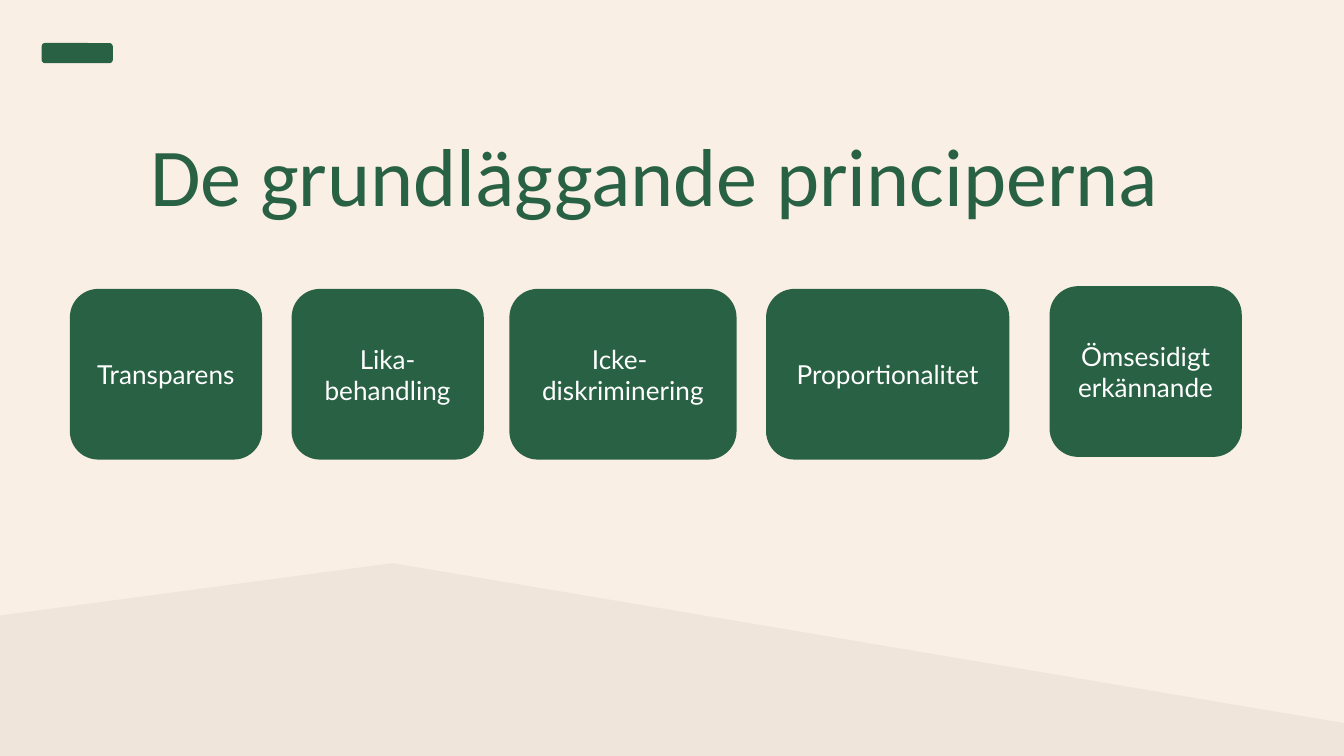
from pptx import Presentation
from pptx.dml.color import RGBColor
from pptx.enum.shapes import MSO_SHAPE
from pptx.enum.text import MSO_ANCHOR, PP_ALIGN
from pptx.util import Inches, Pt

ROUND = MSO_SHAPE.ROUNDED_RECTANGLE
MIDDLE, BOTTOM = MSO_ANCHOR.MIDDLE, MSO_ANCHOR.BOTTOM
CENTER = PP_ALIGN.CENTER
WIDE = 10
HIGH = WIDE * 9 / 16


def color(code):
    return RGBColor.from_string(code)


def write(frame, text, font="Lato", size=14, tint="FFFFFF", anchor=MIDDLE,
          inset=0.1, space=1.0):
    frame.text = text
    frame.word_wrap = True
    frame.vertical_anchor = anchor
    frame.margin_left = frame.margin_right = Inches(inset)
    frame.margin_top = frame.margin_bottom = Inches(inset / 2)
    for para in frame.paragraphs:
        para.alignment = CENTER
        para.line_spacing = space
        for run in para.runs:
            run.font.name = font
            run.font.size = Pt(size)
            run.font.color.rgb = color(tint)


class Deck:
    cream, sand, green = "FAEFE5", "F0E5DB", "296144"

    def __init__(self, width, height):
        self.prs = Presentation()
        self.prs.slide_width = Inches(width)
        self.prs.slide_height = Inches(height)
        self.slide = self.prs.slides.add_slide(self.prs.slide_layouts[5])
        back = self.slide.background.fill
        back.solid()
        back.fore_color.rgb = color(self.cream)

    def paint(self, shape, code):
        shape.shadow.inherit = False
        shape.fill.solid()
        shape.fill.fore_color.rgb = color(code)
        shape.line.fill.background()

    def title(self, text, left, top, width, height):
        head = self.slide.shapes.title
        head.left, head.top = Inches(left), Inches(top)
        head.width, head.height = Inches(width), Inches(height)
        write(head.text_frame, text, font="Calibri", size=44, tint=self.green,
              anchor=BOTTOM, inset=0, space=0.85)

    def hill(self, points):
        spots = [(Inches(x), Inches(y)) for x, y in points]
        path = self.slide.shapes.build_freeform(*spots[0])
        path.add_line_segments(spots[1:], close=True)
        self.paint(path.convert_to_shape(), self.sand)

    def box(self, left, top, width, height, text=""):
        shape = self.slide.shapes.add_shape(
            ROUND, Inches(left), Inches(top), Inches(width), Inches(height))
        self.paint(shape, self.green)
        if text:
            write(shape.text_frame, text)


def main():
    deck = Deck(WIDE, HIGH)

    # Ground and plain mark in the corner
    deck.hill([(0, 4.58), (2.92, 4.19), (WIDE, 5.38), (WIDE, HIGH), (0, HIGH)])
    deck.box(0.31, 0.32, 0.53, 0.15)

    deck.title("De grundläggande principerna", 0.19, 0.85, 9.37, 0.81)

    # Principles: left, top, width, text (\v breaks a line)
    for left, top, width, text in [
        (0.52, 2.15, 1.43, "Transparens"),
        (2.17, 2.15, 1.43, "Lika-\vbehandling"),
        (3.79, 2.15, 1.69, "Icke- \ndiskriminering"),
        (5.7, 2.15, 1.81, "Proportionalitet"),
        (7.81, 2.13, 1.43, "Ömsesidigt erkännande"),
    ]:
        deck.box(left, top, width, 1.27, text)

    deck.prs.save("out.pptx")


if __name__ == "__main__":
    main()
